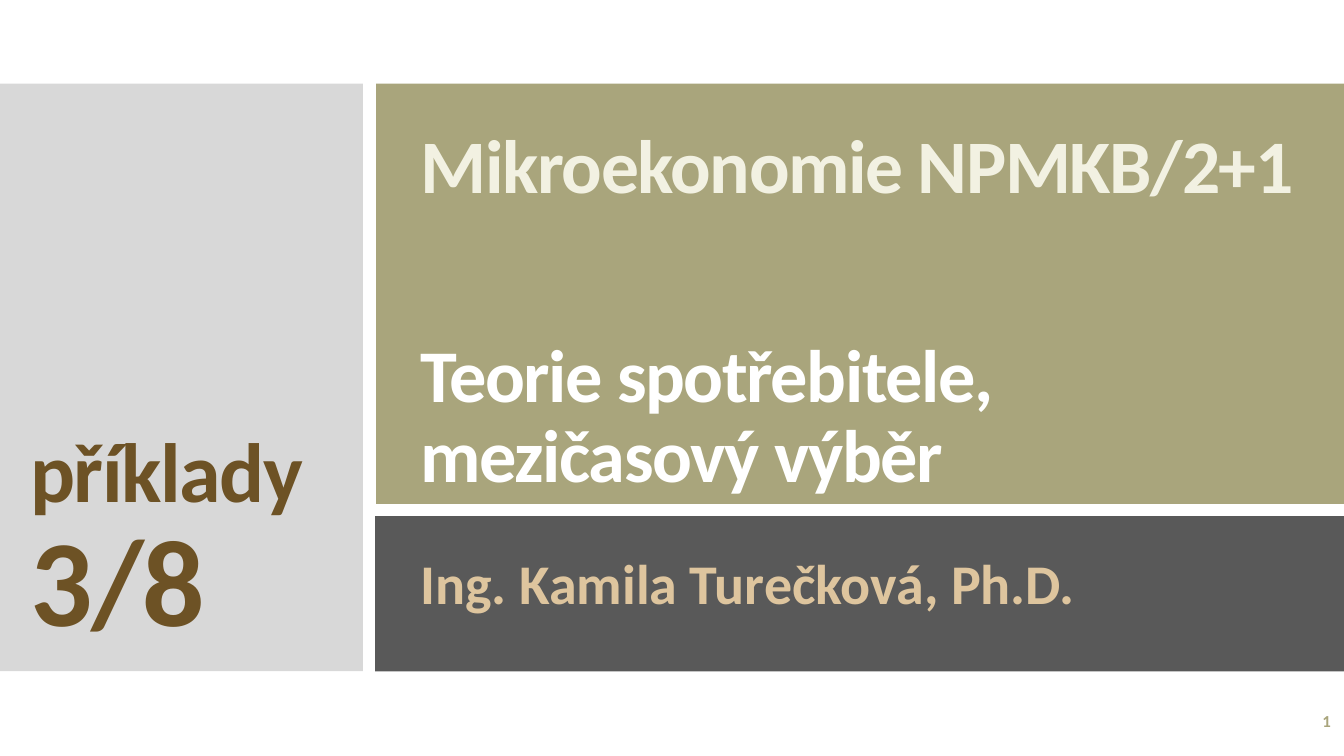
from pptx import Presentation
from pptx.dml.color import RGBColor
from pptx.enum.shapes import MSO_SHAPE
from pptx.enum.text import MSO_ANCHOR, MSO_AUTO_SIZE, PP_ALIGN
from pptx.util import Inches, Pt

FONT = "Calibri"
OLIVE, CREAM, WHITE = "A9A57C", "F2F1E2", "FFFFFF"
LIGHT_GREY, DARK_GREY = "D8D8D8", "595959"
BROWN, SAND = "6D5225", "DEC59E"


def color(hex_code):
    return RGBColor.from_string(hex_code)


def add_panel(slide, box, fill):
    panel = slide.shapes.add_shape(MSO_SHAPE.RECTANGLE, *map(Inches, box))
    panel.shadow.inherit = False
    panel.fill.solid()
    panel.fill.fore_color.rgb = color(fill)
    panel.line.fill.background()


def write_lines(frame, lines, anchor=MSO_ANCHOR.TOP, align=PP_ALIGN.LEFT,
                tracking=0, line_spacing=0.9):
    """Each line is (text, size, colour, space before), sizes in points."""
    frame.word_wrap = True
    frame.auto_size = MSO_AUTO_SIZE.NONE
    frame.vertical_anchor = anchor
    for index, (text, size, ink, gap) in enumerate(lines):
        paragraph = frame.add_paragraph() if index else frame.paragraphs[0]
        paragraph.alignment = align
        paragraph.line_spacing = line_spacing
        paragraph.space_before = Pt(gap)
        run = paragraph.add_run()
        run.text = text
        run.font.name = FONT
        run.font.size = Pt(size)
        run.font.bold = True
        run.font.color.rgb = color(ink)
        if tracking:
            run.font._element.set("spc", str(tracking * 100))


def add_text(slide, box, lines, **layout):
    text_box = slide.shapes.add_textbox(*map(Inches, box))
    write_lines(text_box.text_frame, lines, **layout)


def place_title(slide, box, lines, **layout):
    title = slide.shapes.title
    title.left, title.top, title.width, title.height = map(Inches, box)
    write_lines(title.text_frame, lines, **layout)
    # Bring the title in front of the panels
    slide.shapes.element.append(title.element)


def main():
    deck = Presentation()
    deck.slide_width, deck.slide_height = Inches(13.33), Inches(7.5)
    slide = deck.slides.add_slide(deck.slide_layouts[5])

    # Coloured panels
    add_panel(slide, (0, 0.83, 3.6, 5.83), LIGHT_GREY)
    add_panel(slide, (3.73, 0.83, 9.6, 4.17), OLIVE)
    add_panel(slide, (3.72, 5.12, 9.61, 1.54), DARK_GREY)

    # Course and topic
    place_title(slide, (4.07, 1.42, 9.06, 3.58),
                [("Mikroekonomie NPMKB/2+1", 54, CREAM, 0),
                 ("Teorie spotřebitele, mezičasový výběr", 53.1, WHITE, 92)],
                anchor=MSO_ANCHOR.BOTTOM, tracking=-1)

    # Author
    add_text(slide, (4.07, 5.47, 7.86, 0.84),
             [("Ing. Kamila Turečková, Ph.D.", 40, SAND, 0)])

    # Exercise number
    add_text(slide, (0.2, 0.95, 3.2, 5.58),
             [("příklady", 60, BROWN, 0), ("3/8", 88, BROWN, 0)],
             anchor=MSO_ANCHOR.BOTTOM, tracking=-1)

    # Page number
    add_text(slide, (11.63, 6.95, 1.67, 0.4), [("1", 12, OLIVE, 0)],
             anchor=MSO_ANCHOR.MIDDLE, align=PP_ALIGN.RIGHT, line_spacing=1.0)

    deck.save("out.pptx")


if __name__ == "__main__":
    main()
